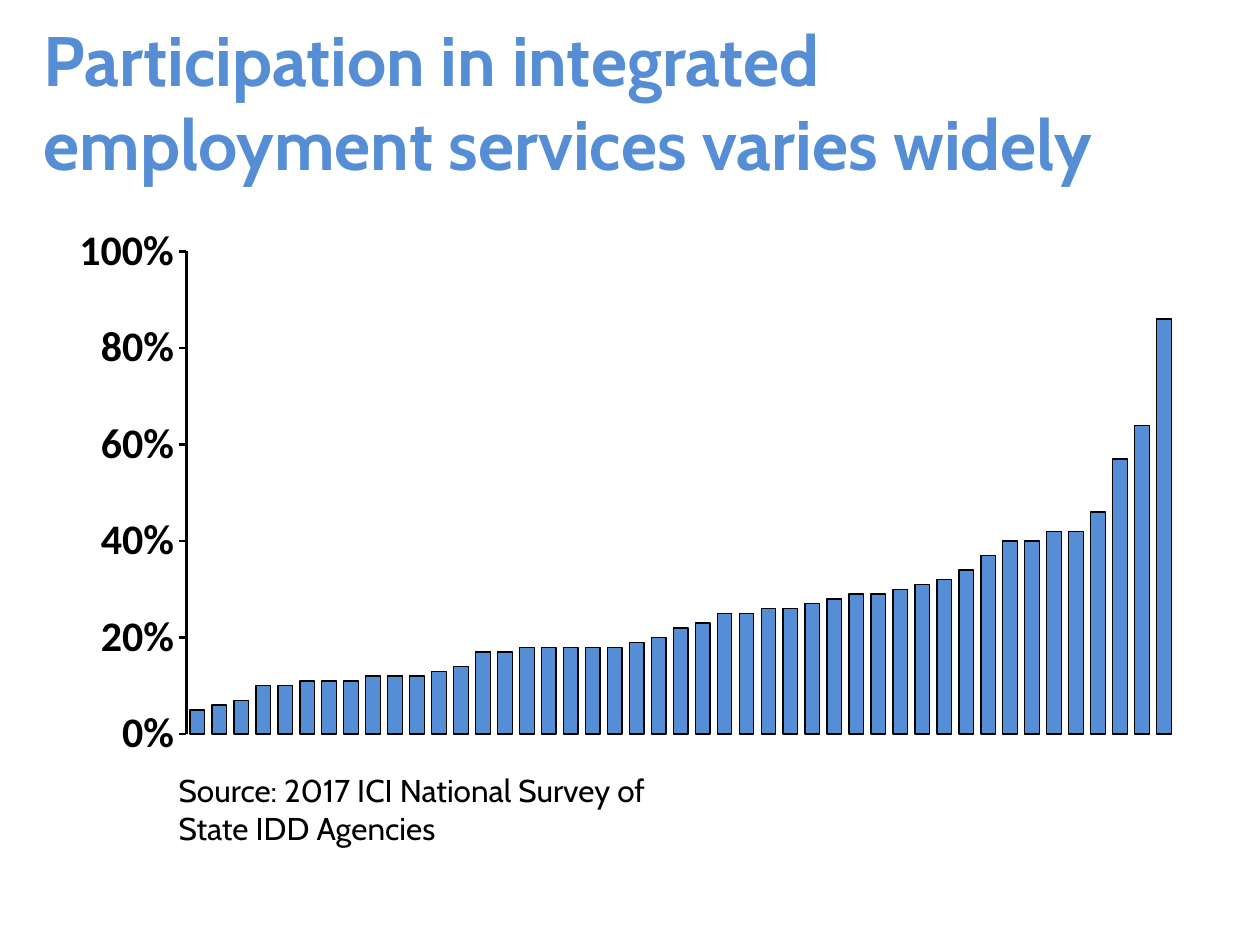
from pptx import Presentation
from pptx.chart.data import CategoryChartData
from pptx.dml.color import RGBColor
from pptx.enum.chart import XL_CHART_TYPE, XL_TICK_MARK
from pptx.enum.text import MSO_ANCHOR, MSO_AUTO_SIZE
from pptx.oxml import parse_xml
from pptx.oxml.ns import nsdecls
from pptx.util import Pt

COLORS = {"blue": "558ED5", "black": "000000"}

# Share of people in integrated employment, one value per state, ascending
PARTICIPATION = [
    0.05, 0.06, 0.07, 0.10, 0.10, 0.11, 0.11, 0.11, 0.12,
    0.12, 0.12, 0.13, 0.14, 0.17, 0.17, 0.18, 0.18, 0.18,
    0.18, 0.18, 0.19, 0.20, 0.22, 0.23, 0.25, 0.25, 0.26,
    0.26, 0.27, 0.28, 0.29, 0.29, 0.30, 0.31, 0.32, 0.34,
    0.37, 0.40, 0.40, 0.42, 0.42, 0.46, 0.57, 0.64, 0.86,
]


def color(name):
    return RGBColor.from_string(COLORS[name])


def format_font(font, size, name, color_name="black", bold=False):
    font.size = Pt(size)
    font.name = name
    font.bold = bold
    font.color.rgb = color(color_name)


def add_text(slide, text, left, top, width, height, size,
             color_name="black", bold=False, anchor=MSO_ANCHOR.TOP):
    shape = slide.shapes.add_textbox(Pt(left), Pt(top), Pt(width), Pt(height))
    frame = shape.text_frame
    frame.word_wrap = True
    frame.auto_size = MSO_AUTO_SIZE.NONE
    frame.vertical_anchor = anchor
    paragraph = frame.paragraphs[0]
    run_lines = text.split("\n")
    for index, line in enumerate(run_lines):
        if index:
            paragraph.add_line_break()
        run = paragraph.add_run()
        run.text = line
        format_font(run.font, size, "Cabin", color_name, bold)
    return shape


def set_plot_area(chart, x, y, width, height):
    """Fix the inner plot area, in fractions of the chart frame."""
    plot_area = chart._chartSpace.chart.plotArea
    for layout in plot_area.findall("{*}layout"):
        plot_area.remove(layout)
    places = "".join(
        f'<c:{tag} val="{value}"/>'
        for tag, value in (("x", x), ("y", y), ("w", width), ("h", height)))
    plot_area.insert(0, parse_xml(
        f'<c:layout {nsdecls("c")}><c:manualLayout>'
        '<c:layoutTarget val="inner"/>'
        '<c:xMode val="edge"/><c:yMode val="edge"/>'
        f'{places}</c:manualLayout></c:layout>'))


def add_column_chart(slide, values, left, top, width, height):
    data = CategoryChartData(number_format="0%")
    data.categories = [str(number) for number in range(1, len(values) + 1)]
    data.add_series("Series 1", values)
    chart = slide.shapes.add_chart(
        XL_CHART_TYPE.COLUMN_CLUSTERED,
        Pt(left), Pt(top), Pt(width), Pt(height), data).chart
    chart.has_legend = False
    chart.has_title = False
    format_font(chart.font, 18, "Calibri")
    set_plot_area(chart, 0.125, 0.057, 0.856, 0.887)

    # Columns
    plot = chart.plots[0]
    plot.gap_width = 50
    plot.vary_by_categories = False
    series = plot.series[0]
    series.format.fill.solid()
    series.format.fill.fore_color.rgb = color("blue")
    series.format.line.color.rgb = color("black")
    series.format.line.width = Pt(0.75)

    # Axes
    chart.category_axis.visible = False
    axis = chart.value_axis
    axis.minimum_scale = 0
    axis.maximum_scale = 1
    axis.major_unit = 0.2
    axis.has_major_gridlines = False
    axis.major_tick_mark = XL_TICK_MARK.OUTSIDE
    axis.format.line.color.rgb = color("black")
    axis.format.line.width = Pt(1.5)
    axis.tick_labels.number_format = "0%"
    axis.tick_labels.number_format_is_linked = False
    format_font(axis.tick_labels.font, 24, "Calibri", bold=True)


def main():
    presentation = Presentation()
    presentation.slide_width = Pt(720)
    presentation.slide_height = Pt(540)
    slide = presentation.slides.add_slide(presentation.slide_layouts[6])

    # Title
    add_text(slide,
             "Participation in integrated\nemployment services varies widely",
             18, 24.5, 684, 66, size=40, color_name="blue", bold=True,
             anchor=MSO_ANCHOR.MIDDLE)

    # Chart
    add_column_chart(slide, PARTICIPATION, 24, 126, 660, 311)

    # Source note
    add_text(slide,
             "Source: 2017 ICI National Survey of\nState IDD Agencies",
             95, 437, 408, 50.5, size=18)

    presentation.save("out.pptx")


if __name__ == "__main__":
    main()
